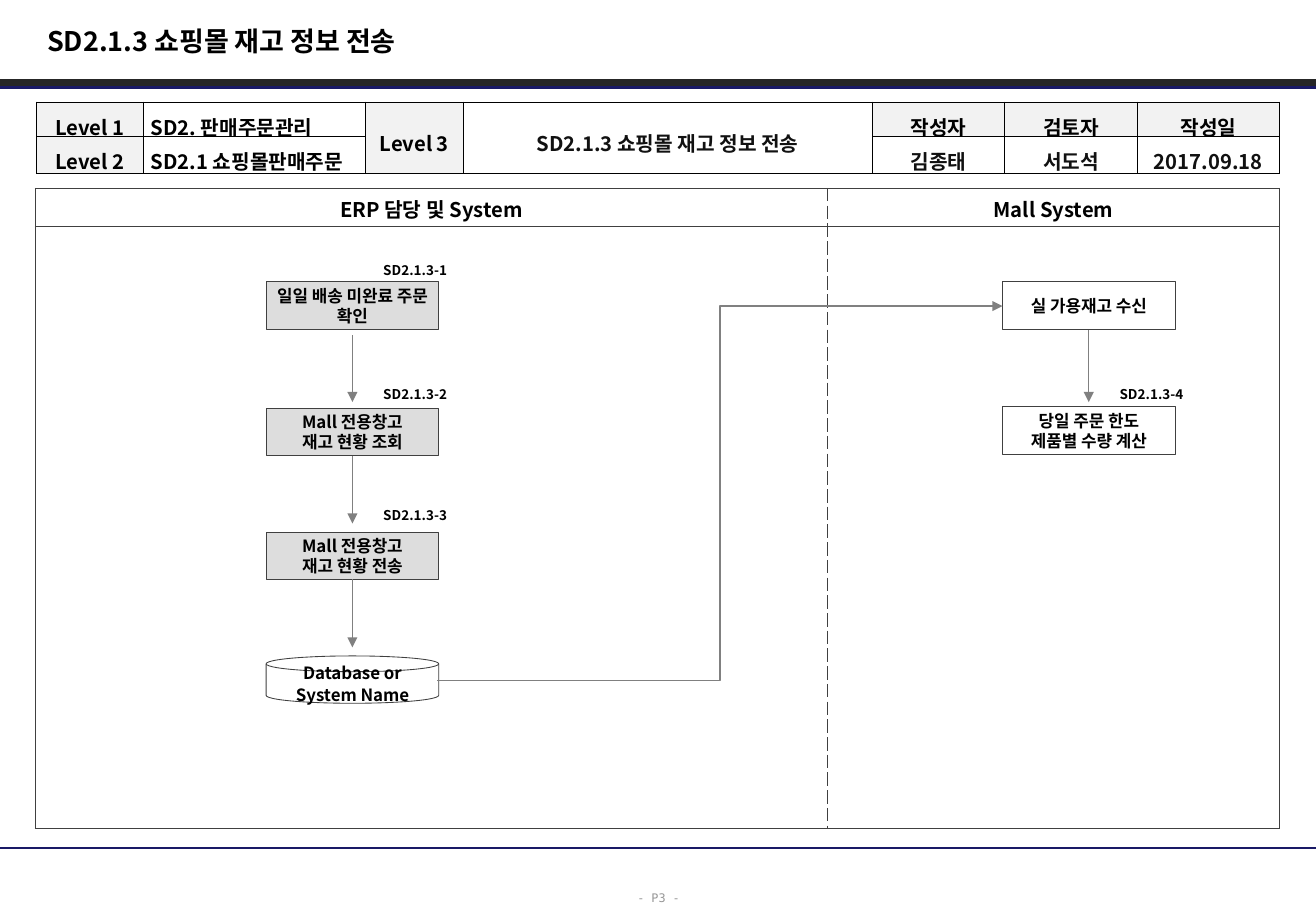
from lxml import etree
from pptx import Presentation
from pptx import util as u
from pptx.dml.color import RGBColor
from pptx.enum import shapes, text
from pptx.oxml.ns import qn

Inches, Pt = u.Inches, u.Pt
ALIGN, ANCHOR = text.PP_ALIGN, text.MSO_ANCHOR
KIND, LINK = shapes.MSO_SHAPE, shapes.MSO_CONNECTOR

# Content
COLORS = {"ink": "000000", "soft": "111111", "border": "404040", "arrow": "808080",
          "navy": "191966", "bar": "262626", "head": "F2F2F2", "step": "DDDDDD",
          "white": "FFFFFF", "page": "969696"}
FONT, PAGE_FONT = "Noto Sans CJK KR", "DejaVu Sans Mono"
TITLE = "SD2.1.3 쇼핑몰 재고 정보 전송"
INFO = [["Level 1", "SD2. 판매주문관리", "Level 3", TITLE, "작성자", "검토자", "작성일"],
        ["Level 2", "SD2.1 쇼핑몰판매주문", None, None, "김종태", "서도석", "2017.09.18"]]
INFO_COLS = [0.88, 1.83, 0.8, 3.37, 1.09, 1.09, 1.17]
INFO_ROWS = [0.28, 0.31]
INFO_HEADS = {(0, 0), (1, 0), (0, 2), (0, 4), (0, 5), (0, 6)}
MERGED_COLS = (2, 3)
LANES = [["ERP 담당 및 System", "Mall System"], [None, None]]
LANE_COLS, LANE_ROWS = [6.52, 3.72], [0.31, 4.96]

STEP_W, STEP_H = 1.42, 0.39
LEFT_X, RIGHT_X = 2.19, 8.25
# left, top, shape, fill, lines
STEPS = [
    (LEFT_X, 2.32, KIND.RECTANGLE, "step", ["일일 배송 미완료 주문 확인"]),
    (LEFT_X, 3.36, KIND.RECTANGLE, "step", ["Mall 전용창고", "재고 현황 조회"]),
    (LEFT_X, 4.38, KIND.RECTANGLE, "step", ["Mall 전용창고", "재고 현황 전송"]),
    (LEFT_X, 5.4, KIND.FLOWCHART_MAGNETIC_DISK, "white", ["Database or", "System Name"]),
    (RIGHT_X, 2.32, KIND.RECTANGLE, None, ["실 가용재고 수신"]),
    (RIGHT_X, 3.35, KIND.RECTANGLE, None, ["당일 주문 한도", "제품별 수량 계산"]),
]
# lane left, start, end
ARROWS = [(LEFT_X, 2.76, 3.31), (LEFT_X, 3.75, 4.31), (LEFT_X, 4.77, 5.33),
          (RIGHT_X, 2.72, 3.31)]
# step code, lane left, top
CODES = [("SD2.1.3-1", LEFT_X, 2.12), ("SD2.1.3-2", LEFT_X, 3.14),
         ("SD2.1.3-3", LEFT_X, 4.13), ("SD2.1.3-4", RIGHT_X, 3.14)]

presentation = Presentation()
presentation.slide_width, presentation.slide_height = Inches(10.83), Inches(7.5)
slide = presentation.slides.add_slide(presentation.slide_layouts[6])


def rgb(name):
    return RGBColor.from_string(COLORS[name])


def write(frame, lines, size, color="ink", font=FONT, bold=True, gap=0, **paragraph_format):
    for index, line in enumerate(lines):
        paragraph = frame.paragraphs[0] if index == 0 else frame.add_paragraph()
        for name, value in paragraph_format.items():
            setattr(paragraph, name, value)
        if index and gap:
            paragraph.space_before = Pt(gap)
        run = paragraph.add_run()
        run.text = line
        for name, value in {"size": Pt(size), "name": font, "bold": bold}.items():
            setattr(run.font, name, value)
        run.font.color.rgb = rgb(color)
        east_asian = etree.SubElement(run.font._element, qn("a:ea"))
        east_asian.set("typeface", font)


def set_margins(target, side, top):
    for name, value in {"left": side, "right": side, "top": top, "bottom": top}.items():
        setattr(target, "margin_" + name, Inches(value))


def add_text(box, line, size, margins=(0.1, 0.05), anchor=ANCHOR.TOP, wrap=True, **style):
    frame = slide.shapes.add_textbox(*map(Inches, box)).text_frame
    frame.word_wrap, frame.vertical_anchor = wrap, anchor
    set_margins(frame, *margins)
    write(frame, [line], size, **style)


def add_line(start, end, color, width, kind=LINK.STRAIGHT, arrow=False):
    connector = slide.shapes.add_connector(kind, *map(Inches, start + end))
    connector.line.color.rgb = rgb(color)
    connector.line.width = Pt(width)
    if arrow:
        etree.SubElement(connector.line._ln, qn("a:tailEnd")).set("type", "triangle")
    etree.SubElement(connector._element.spPr, qn("a:effectLst"))


def set_borders(cell, color, dashed=()):
    properties = cell._tc.get_or_add_tcPr()
    for index, side in enumerate(("L", "R", "T", "B")):
        border = etree.Element(qn("a:ln" + side), w=str(Pt(0.5)))
        fill = etree.SubElement(border, qn("a:solidFill"))
        etree.SubElement(fill, qn("a:srgbClr")).set("val", COLORS[color])
        dash = "dash" if side in dashed else "solid"
        etree.SubElement(border, qn("a:prstDash")).set("val", dash)
        properties.insert(index, border)


def add_grid(left, top, columns, rows):
    table = slide.shapes.add_table(len(rows), len(columns), Inches(left), Inches(top),
                                   Inches(sum(columns)), Inches(sum(rows))).table
    table.first_row = table.horz_banding = False
    for column, width in zip(table.columns, columns):
        column.width = Inches(width)
    for row, height in zip(table.rows, rows):
        row.height = Inches(height)
    return table


# Page frame: footer rule and page number
add_line((0, 0.7), (10.83, 0.7), "navy", 4.5)
add_text((5.14, 7.25, 0.56, 0.25), "- P3 -", 7, wrap=False, color="page",
         font=PAGE_FONT, bold=False, line_spacing=1.3, alignment=ALIGN.CENTER)
add_line((0, 6.98), (10.83, 6.98), "navy", 1.5)

# Swim lanes
lanes = add_grid(0.29, 1.55, LANE_COLS, LANE_ROWS)
for r, row in enumerate(LANES):
    for c, heading in enumerate(row):
        cell = lanes.cell(r, c)
        cell.fill.background()
        set_margins(cell, 0.1, 0.05)
        set_borders(cell, "border", dashed="L" if c else "R")
        if heading:
            write(cell.text_frame, [heading], 12, alignment=ALIGN.CENTER)

# Process information
info = add_grid(0.3, 0.84, INFO_COLS, INFO_ROWS)
for c in MERGED_COLS:
    info.cell(0, c).merge(info.cell(1, c))
for r, row in enumerate(INFO):
    for c, entry in enumerate(row):
        cell = info.cell(r, c)
        if (r, c) in INFO_HEADS:
            cell.fill.solid()
            cell.fill.fore_color.rgb = rgb("head")
        else:
            cell.fill.background()
        cell.vertical_anchor = ANCHOR.MIDDLE
        set_margins(cell, 0.06, 0.01)
        set_borders(cell, "ink")
        if entry:
            soft = c == 3 or (r == 1 and c > 3)
            write(cell.text_frame, [entry], 12, color="soft" if soft else "ink",
                  line_spacing=1.3, alignment=ALIGN.LEFT if c == 1 else ALIGN.CENTER)

# Title and its bar
add_line((0, 0.68), (10.83, 0.68), "bar", 4)
add_text((0.29, 0.15, 3.43, 0.37), TITLE, 16, anchor=ANCHOR.MIDDLE)

# Process steps
for left, top, kind, fill, lines in STEPS:
    step = slide.shapes.add_shape(kind, *map(Inches, (left, top, STEP_W, STEP_H)))
    step.shadow.inherit = False
    if fill:
        step.fill.solid()
        step.fill.fore_color.rgb = rgb(fill)
    else:
        step.fill.background()
    step.line.color.rgb = rgb("border")
    step.line.width = Pt(0.5)
    is_disk = kind == KIND.FLOWCHART_MAGNETIC_DISK
    frame = step.text_frame
    frame.word_wrap, frame.vertical_anchor = not is_disk, ANCHOR.MIDDLE
    set_margins(frame, 0.1 if is_disk else 0.04, 0.05)
    write(frame, lines, 10, gap=1 if is_disk else 0, alignment=ALIGN.CENTER)

# Flow arrows
for left, start, end in ARROWS:
    center = left + STEP_W / 2
    add_line((center, start), (center, end), "arrow", 0.75, arrow=True)
add_line((3.6, 5.6), (RIGHT_X, 2.52), "arrow", 0.75, LINK.ELBOW, arrow=True)

# Step codes
for code, left, top in CODES:
    add_text((left + 0.9, top, 0.59, 0.22), code, 8, margins=(0, 0.04), wrap=False,
             alignment=ALIGN.RIGHT)

presentation.save("out.pptx")
